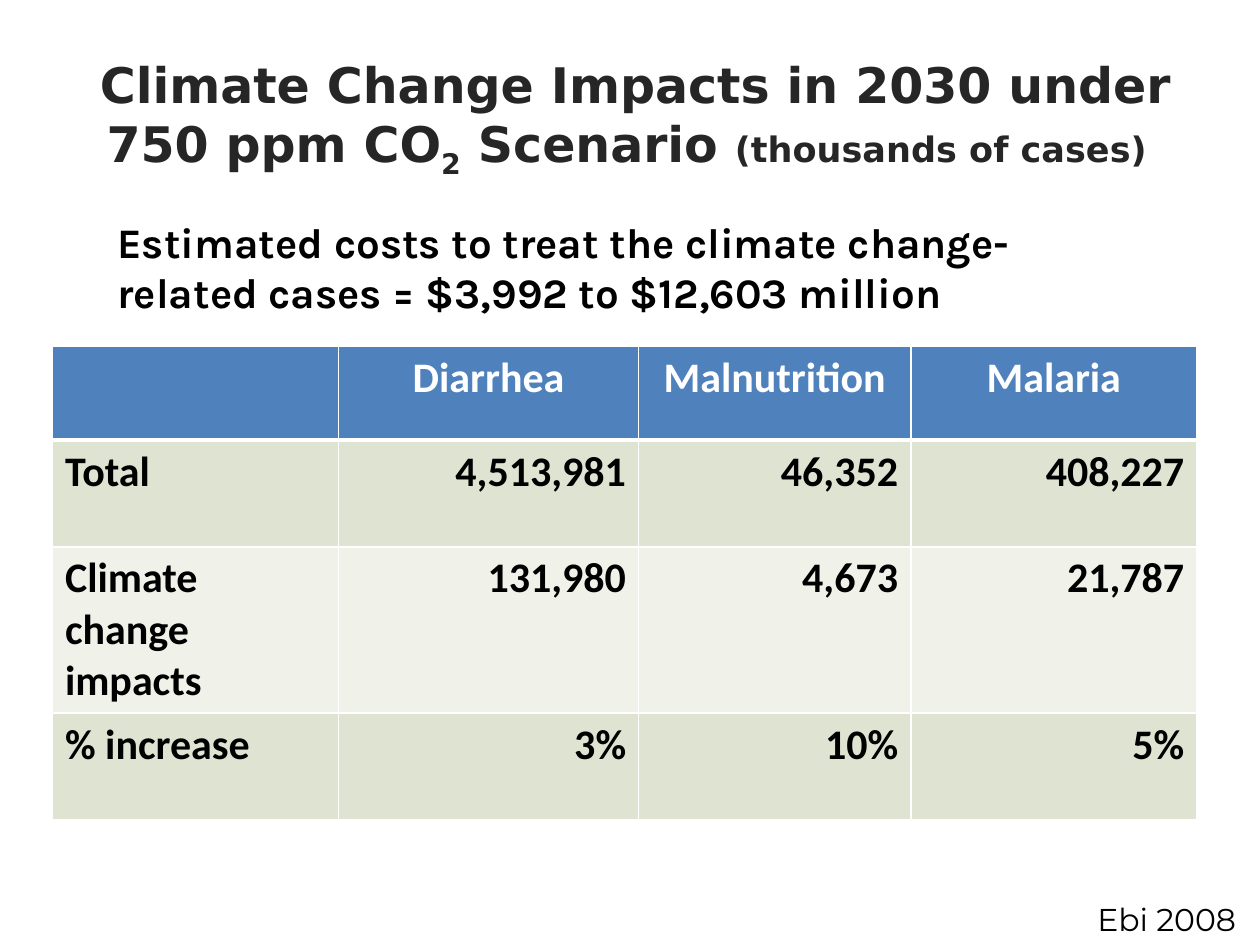
from lxml.etree import SubElement
from pptx import Presentation
from pptx.dml.color import RGBColor
from pptx.enum.text import MSO_ANCHOR, MSO_AUTO_SIZE, PP_ALIGN
from pptx.oxml.ns import qn
from pptx.util import Pt

BLACK = RGBColor(0x00, 0x00, 0x00)
WHITE = RGBColor(0xFF, 0xFF, 0xFF)
CHARCOAL = RGBColor(0x26, 0x26, 0x26)
BLUE = RGBColor(0x4F, 0x81, 0xBD)
SAGE = RGBColor(0xDF, 0xE4, 0xD2)
PALE_SAGE = RGBColor(0xF0, 0xF2, 0xEA)


def add_text(left, top, width, height, parts, font, size, color, bold):
    frame = slide.shapes.add_textbox(Pt(left), Pt(top), Pt(width), Pt(height)).text_frame
    frame.word_wrap = True
    paragraph = frame.paragraphs[0]
    paragraph.font.name = font
    paragraph.font.size = Pt(size)
    paragraph.font.color.rgb = color
    paragraph.font.bold = bold
    for part in parts:
        paragraph.add_run().text = part
    return frame


def set_border(cell, side, width):
    line = SubElement(cell._tc.get_or_add_tcPr(), qn(f"a:{side}"), w=str(Pt(width)))
    fill = SubElement(line, qn("a:solidFill"))
    SubElement(fill, qn("a:srgbClr"), val=str(WHITE))


presentation = Presentation()
presentation.slide_width = Pt(720)
presentation.slide_height = Pt(540)
slide = presentation.slides.add_slide(presentation.slide_layouts[6])

impacts = [
    ["", "Diarrhea", "Malnutrition", "Malaria"],
    ["Total", "4,513,981", "46,352", "408,227"],
    ["Climate change impacts", "131,980", "4,673", "21,787"],
    ["% increase", "3%", "10%", "5%"],
]
column_widths = [163.5, 171.5, 155.5, 163.5]
row_heights = [53.5, 61, 95, 61]
row_fills = [BLUE, SAGE, PALE_SAGE, SAGE]

impact_table = slide.shapes.add_table(
    4, 4, Pt(30), Pt(198), Pt(sum(column_widths)), Pt(sum(row_heights))
).table
for column, width in zip(impact_table.columns, column_widths):
    column.width = Pt(width)
for row, height in zip(impact_table.rows, row_heights):
    row.height = Pt(height)

for row_index, values in enumerate(impacts):
    for column_index, value in enumerate(values):
        cell = impact_table.cell(row_index, column_index)
        set_border(cell, "lnL", 1)
        set_border(cell, "lnR", 1)
        set_border(cell, "lnT", 3 if row_index == 1 else 1)
        set_border(cell, "lnB", 3 if row_index == 0 else 1)
        cell.fill.solid()
        cell.fill.fore_color.rgb = row_fills[row_index]
        cell.text = value
        paragraph = cell.text_frame.paragraphs[0]
        paragraph.font.name = "Calibri"
        paragraph.font.size = Pt(24)
        paragraph.font.bold = True
        paragraph.font.color.rgb = WHITE if row_index == 0 else BLACK
        if row_index == 0:
            paragraph.alignment = PP_ALIGN.CENTER
        elif column_index > 0:
            paragraph.alignment = PP_ALIGN.RIGHT

title_parts = [
    "Climate Change Impacts in 2030 under 750 ppm CO",
    "2",
    " Scenario ",
    "(thousands of cases)",
    " ",
]
title = add_text(30, 18, 666, 98, title_parts, "DejaVu Sans", 28, CHARCOAL, True)
title.vertical_anchor = MSO_ANCHOR.MIDDLE
title_line = title.paragraphs[0]
title_line.alignment = PP_ALIGN.CENTER
title_line.runs[1].font._element.set("baseline", "-25000")
title_line.runs[3].font.size = Pt(20)

cost_text = (
    "Estimated costs to treat the climate change-related cases"
    " = $3,992 to $12,603 million"
)
costs = add_text(60, 120, 595, 65, [cost_text], "Karla", 24, BLACK, True)
costs.auto_size = MSO_AUTO_SIZE.SHAPE_TO_FIT_TEXT

citation = add_text(620, 511, 100, 29, ["Ebi 2008"], "Montserrat", 18, BLACK, False)
citation.word_wrap = False
citation.auto_size = MSO_AUTO_SIZE.SHAPE_TO_FIT_TEXT

presentation.save("out.pptx")
